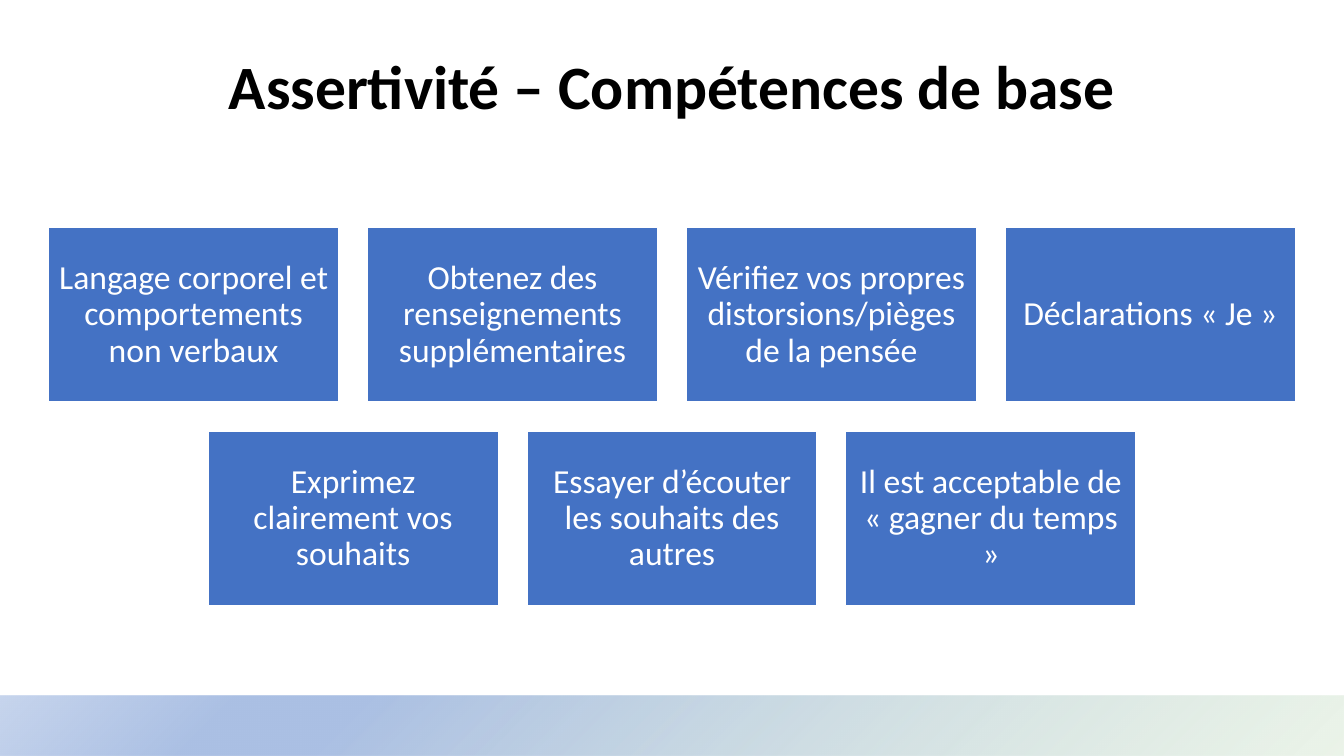
import pptx
import pptx.dml.color
import pptx.enum.shapes
import pptx.enum.text
import pptx.oxml
import pptx.oxml.ns
import pptx.util

Inches = pptx.util.Inches
Pt = pptx.util.Pt

WIDE, HIGH = 13.33, 7.5
BOX_W, BOX_H = 2.88, 1.73
STEP_X, STEP_Y = 3.163, 2.02
TOP = 2.26
ROWS = [
    [
        "Langage corporel et comportements non verbaux",
        "Obtenez des renseignements supplémentaires",
        "Vérifiez vos propres distorsions/pièges de la pensée",
        "Déclarations « Je »",
    ],
    [
        "Exprimez clairement vos souhaits",
        "Essayer d’écouter les souhaits des autres",
        "Il est acceptable de « gagner du temps »",
    ],
]
STOPS = [(0, "D6E8D1", 47), (74, "ABC0E4", 100), (83, "ABC0E4", 100), (100, "C7D5ED", 100)]


def color(code):
    return pptx.dml.color.RGBColor.from_string(code)


def add_rect(slide, left, top, width, height):
    shape = slide.shapes.add_shape(
        pptx.enum.shapes.MSO_SHAPE.RECTANGLE,
        Inches(left), Inches(top), Inches(width), Inches(height),
    )
    shape.shadow.inherit = False
    return shape


def write(frame, text, size, hue, anchor, bold=False):
    frame.word_wrap = True
    frame.vertical_anchor = anchor
    para = frame.paragraphs[0]
    para.alignment = pptx.enum.text.PP_ALIGN.CENTER
    para.line_spacing = 0.9
    run = para.add_run()
    run.text = text
    run.font.name = "Calibri"
    run.font.size = Pt(size)
    run.font.bold = bold
    run.font.color.rgb = color(hue)


def add_band(slide):
    band = add_rect(slide, 0, 6.9, WIDE, 0.6)
    stops = "".join(
        f'<a:gs pos="{spot * 1000}"><a:srgbClr val="{hue}">'
        f'<a:alpha val="{alpha * 1000}"/></a:srgbClr></a:gs>'
        for spot, hue, alpha in STOPS
    )
    fade = pptx.oxml.parse_xml(
        f'<a:gradFill {pptx.oxml.ns.nsdecls("a")} rotWithShape="1">'
        f'<a:gsLst>{stops}</a:gsLst><a:path path="circle">'
        '<a:fillToRect l="100000" t="100000"/></a:path></a:gradFill>'
    )
    band.fill.background()
    props = band.fill._xPr
    props.replace(props.find(pptx.oxml.ns.qn("a:noFill")), fade)
    band.line.fill.background()


def add_title(slide, text):
    box = slide.shapes.add_textbox(Inches(1.48), Inches(0.5), Inches(10.38), Inches(0.77))
    write(box.text_frame, text, 44, "000000", pptx.enum.text.MSO_ANCHOR.BOTTOM, True)


def add_card(slide, text, left, top):
    card = add_rect(slide, left, top, BOX_W, BOX_H)
    card.fill.solid()
    card.fill.fore_color.rgb = color("4472C4")
    card.line.color.rgb = color("FFFFFF")
    card.line.width = Pt(1)
    frame = card.text_frame
    frame.margin_left = frame.margin_right = Inches(0.1)
    frame.margin_top = frame.margin_bottom = Inches(0.1)
    write(frame, text, 24, "FFFFFF", pptx.enum.text.MSO_ANCHOR.MIDDLE)


def main():
    deck = pptx.Presentation()
    deck.slide_width, deck.slide_height = Inches(WIDE), Inches(HIGH)
    slide = deck.slides.add_slide(deck.slide_layouts[6])
    add_band(slide)
    add_title(slide, "Assertivité – Compétences de base")
    for row, texts in enumerate(ROWS):
        left = (WIDE - BOX_W - (len(texts) - 1) * STEP_X) / 2
        for col, text in enumerate(texts):
            add_card(slide, text, left + col * STEP_X, TOP + row * STEP_Y)
    deck.save("out.pptx")


if __name__ == "__main__":
    main()
